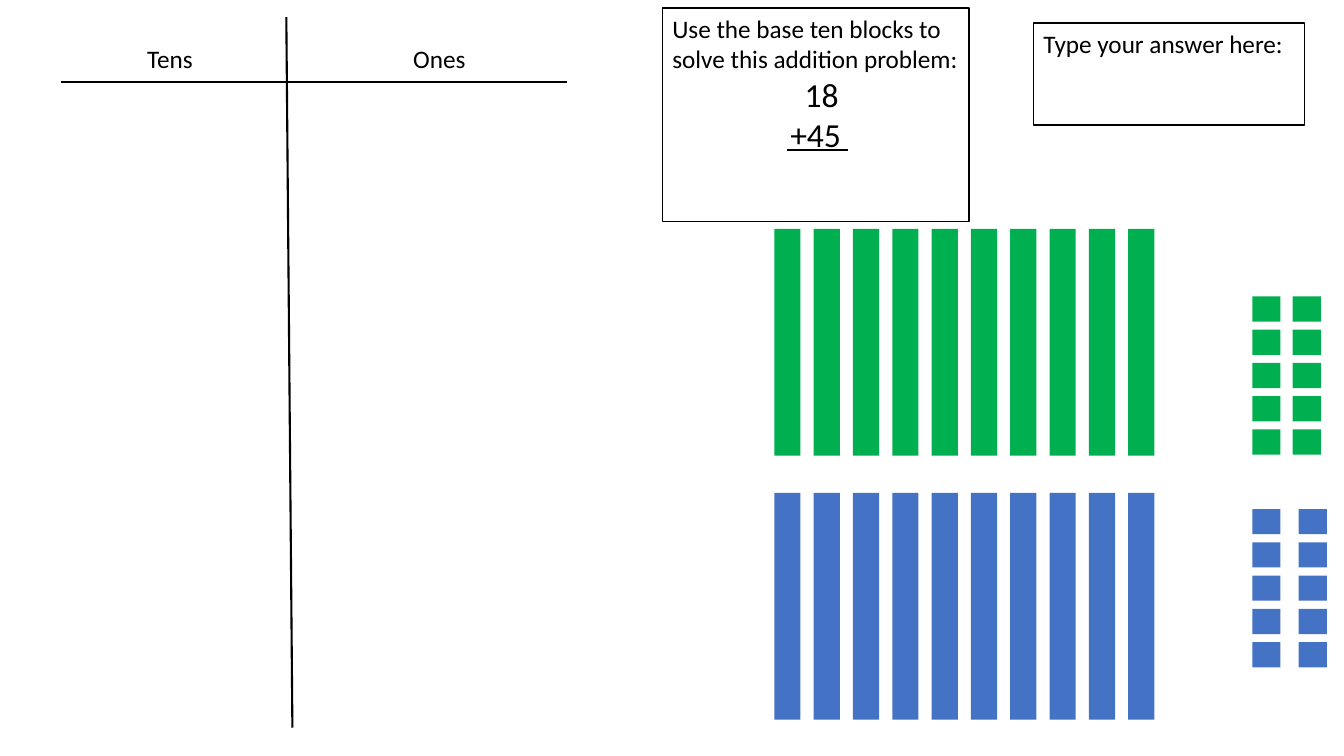
from pptx import Presentation
from pptx import util as u
from pptx.dml.color import RGBColor
from pptx.enum import shapes, text
from pptx.oxml.ns import qn
from lxml import etree

BLACK, WHITE, GREEN, BLUE = "000000", "FFFFFF", "00B050", "4472C4"


def color(value):
    return RGBColor.from_string(value)


class Worksheet:
    """Style and drawing methods for the current slide."""
    font = {"name": "Calibri", "size": u.Pt(18)}
    frame = {"word_wrap": True, "vertical_anchor": text.MSO_ANCHOR.TOP,
             "auto_size": text.MSO_AUTO_SIZE.NONE}

    def __init__(self, slide):
        self.slide = slide

    def line(self, start, end, width):
        points = [u.Inches(value) for value in (*start, *end)]
        connector = self.slide.shapes.add_connector(
            shapes.MSO_CONNECTOR.STRAIGHT, *points)
        connector.line.color.rgb = color(BLACK)
        connector.line.width = u.Pt(width)
        properties = connector._element.find(qn("p:spPr"))
        etree.SubElement(properties, qn("a:effectLst"))

    def block(self, box, fill, outline=None):
        shape = self.slide.shapes.add_shape(
            shapes.MSO_SHAPE.RECTANGLE, *[u.Inches(value) for value in box])
        shape.shadow.inherit = False
        shape.fill.solid()
        shape.fill.fore_color.rgb = color(fill)
        if outline:
            shape.line.color.rgb = color(outline)
            shape.line.width = u.Pt(1)
        else:
            shape.line.fill.background()
        return shape

    def fill_text(self, shape, lines):
        """Each line is (words, format values, left indent in inches)."""
        for name, value in self.frame.items():
            setattr(shape.text_frame, name, value)
        for index, (words, formats, indent) in enumerate(lines):
            paragraph = (shape.text_frame.add_paragraph() if index
                         else shape.text_frame.paragraphs[0])
            paragraph.alignment = formats.get("alignment", text.PP_ALIGN.LEFT)
            if indent:
                paragraph._p.get_or_add_pPr().set("marL", str(u.Inches(indent)))
            run = paragraph.add_run()
            run.text = words
            run.font.color.rgb = color(BLACK)
            for name, value in {**self.font, **formats.get("font", {})}.items():
                setattr(run.font, name, value)

    def label(self, box, words):
        shape = self.slide.shapes.add_textbox(*[u.Inches(value) for value in box])
        self.fill_text(shape, [(words, {}, 0)])

    def panel(self, box, lines):
        self.fill_text(self.block(box, WHITE, BLACK), lines)

    def blocks(self, lefts, tops, size, fill):
        for left in lefts:
            for top in tops:
                self.block((left, top, *size), fill)


def main():
    presentation = Presentation()
    presentation.slide_width = u.Inches(13.33)
    presentation.slide_height = u.Inches(7.5)
    sheet = Worksheet(presentation.slides.add_slide(presentation.slide_layouts[6]))

    # Place value chart
    sheet.line((0.61, 0.81), (5.62, 0.81), 1.5)
    sheet.line((2.84, 0.17), (2.9, 7.22), 1.5)
    for left, words in ((1.36, "Tens"), (4, "Ones")):
        sheet.label((left, 0.38, 1.31, 0.4), words)

    # Problem and answer panels
    number = {"alignment": text.PP_ALIGN.CENTER, "font": {"size": u.Pt(24)}}
    sheet.panel((6.57, 0.08, 3.04, 2.12), [
        ("Use the base ten blocks to solve this addition problem:", {}, 0),
        ("18", number, 0.12),
        ("+45", number, 0)])
    sheet.panel((10.25, 0.23, 2.69, 1.01), [("Type your answer here:", {}, 0)])

    # Ten rods and ten unit blocks in each colour
    rod_lefts = [7.68 + 0.39 * column for column in range(10)]
    for fill, rod_top, unit_top, unit_lefts in (
            (GREEN, 2.27, 2.94, (12.42, 12.82)),
            (BLUE, 4.89, 5.05, (12.42, 12.88))):
        unit_tops = [unit_top + 0.33 * row for row in range(5)]
        sheet.blocks(rod_lefts, [rod_top], (0.26, 2.25), fill)
        sheet.blocks(unit_lefts, unit_tops, (0.28, 0.25), fill)

    # Sum line
    sheet.line((7.81, 1.49), (8.41, 1.49), 1)

    presentation.save("out.pptx")


if __name__ == "__main__":
    main()
